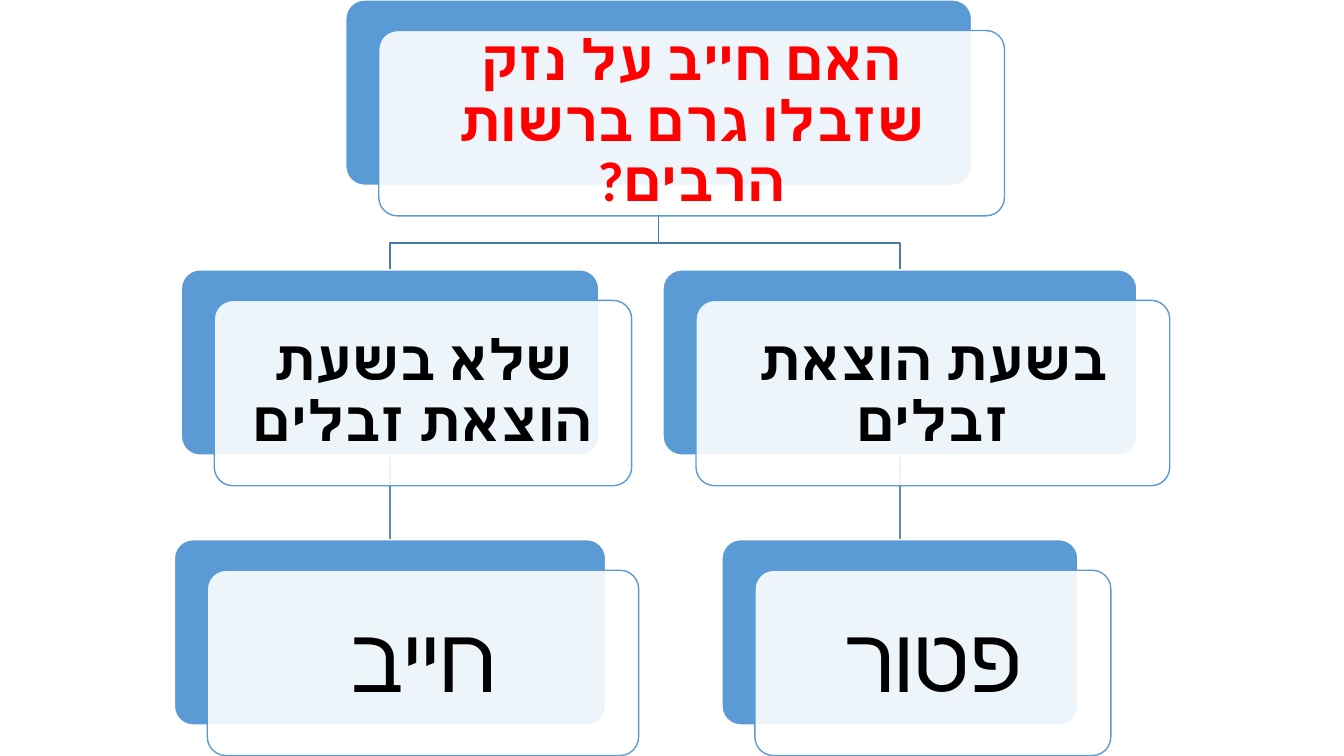
from lxml.etree import SubElement
from pptx import Presentation
from pptx.dml.color import RGBColor
from pptx.enum.shapes import MSO_CONNECTOR, MSO_SHAPE
from pptx.enum.text import MSO_ANCHOR, MSO_AUTO_SIZE, PP_ALIGN
from pptx.oxml.ns import qn
from pptx.util import Cm, Pt

HUES = {"blue": "5B9BD5", "white": "FFFFFF", "red": "FF0000",
        "black": "000000", "elbow": "497CAB", "stem": "538DC1"}
FONT = "Calibri"
HIGH, STEP = 4.67, 6.8      # card height and distance between rows
DX, DY = 0.83, 0.77         # shift of the front card
BEND = 6.12                 # height at which the branches turn

# centre of the branch, then text and width of its case and its ruling
SIDES = [
    (22.68, ("בשעת הוצאת זבלים", 11.94), ("פטור", 8.97)),
    (9.83, ("שלא בשעת הוצאת זבלים", 10.52), ("חייב", 10.87)),
]
ASK, ROOT, WIDE = "האם חייב על נזק שזבלו גרם ברשות הרבים?", 16.6, 15.77


def hue(name):
    return RGBColor.from_string(HUES[name])


def ink(line, name):
    line.color.rgb = hue(name)
    line.width = Pt(1)


def write(shape, text, size, color="black", bold=True, pad=0.43):
    frame = shape.text_frame
    frame.word_wrap = True
    frame.auto_size = MSO_AUTO_SIZE.NONE
    frame.vertical_anchor = MSO_ANCHOR.MIDDLE
    frame.margin_left = frame.margin_right = Cm(pad)
    frame.margin_top = frame.margin_bottom = Cm(pad)
    para = frame.paragraphs[0]
    para.alignment = PP_ALIGN.CENTER
    para.line_spacing = 0.9
    para._p.get_or_add_pPr().set("rtl", "1")
    run = para.add_run()
    run.text = text
    font = run.font
    font.name, font.size, font.bold = FONT, Pt(size), bold
    font.color.rgb = hue(color)
    SubElement(font._element, qn("a:cs"), typeface=FONT)


def panel(slide, left, top, width, fill, edge):
    shape = slide.shapes.add_shape(MSO_SHAPE.ROUNDED_RECTANGLE, Cm(left),
                                   Cm(top), Cm(width), Cm(HIGH))
    shape.adjustments[0] = 0.1
    shape.shadow.inherit = False
    shape.fill.solid()
    shape.fill.fore_color.rgb = hue(fill)
    ink(shape.line, edge)
    return shape


def card(slide, mid, top, width):
    """Draw a blue card with a sheer white one over it; return the latter."""
    left = mid - width / 2
    panel(slide, left, top, width, "blue", "white")
    front = panel(slide, left + DX, top + DY, width, "white", "blue")
    tint = front._element.spPr.find(qn("a:solidFill"))[0]
    SubElement(tint, qn("a:alpha"), val="90000")
    return front


def links(slide, mid):
    """Join the question to a case, and the case to its ruling."""
    pen = slide.shapes.build_freeform(Cm(ROOT), Cm(HIGH))
    pen.add_line_segments([(Cm(ROOT), Cm(BEND)), (Cm(mid), Cm(BEND)),
                           (Cm(mid), Cm(STEP))], close=False)
    elbow = pen.convert_to_shape()
    elbow.shadow.inherit = False
    elbow.fill.background()
    ink(elbow.line, "elbow")
    stem = slide.shapes.add_connector(MSO_CONNECTOR.STRAIGHT, Cm(mid),
                                      Cm(STEP + HIGH), Cm(mid), Cm(2 * STEP))
    SubElement(stem._element.spPr, qn("a:effectLst"))
    ink(stem.line, "stem")


def question(slide):
    front = card(slide, ROOT, 0, WIDE)
    title, gap = slide.shapes.title, Cm(0.13)
    title.left, title.top = front.left + gap, front.top + gap
    title.width, title.height = front.width - 2 * gap, front.height - 2 * gap
    write(title, ASK, 40, "red")
    front._element.addnext(title._element)


def branch(slide, mid, case, ruling):
    text, width = case
    write(card(slide, mid, STEP, width), text, 40)
    text, width = ruling
    write(card(slide, mid, 2 * STEP, width), text, 65, bold=False, pad=0.69)


def main():
    deck = Presentation()
    deck.slide_width, deck.slide_height = Cm(33.87), Cm(19.05)
    slide = deck.slides.add_slide(deck.slide_layouts[5])
    for mid, case, ruling in SIDES:
        links(slide, mid)
    question(slide)
    for side in SIDES:
        branch(slide, *side)
    deck.save("out.pptx")


if __name__ == "__main__":
    main()
